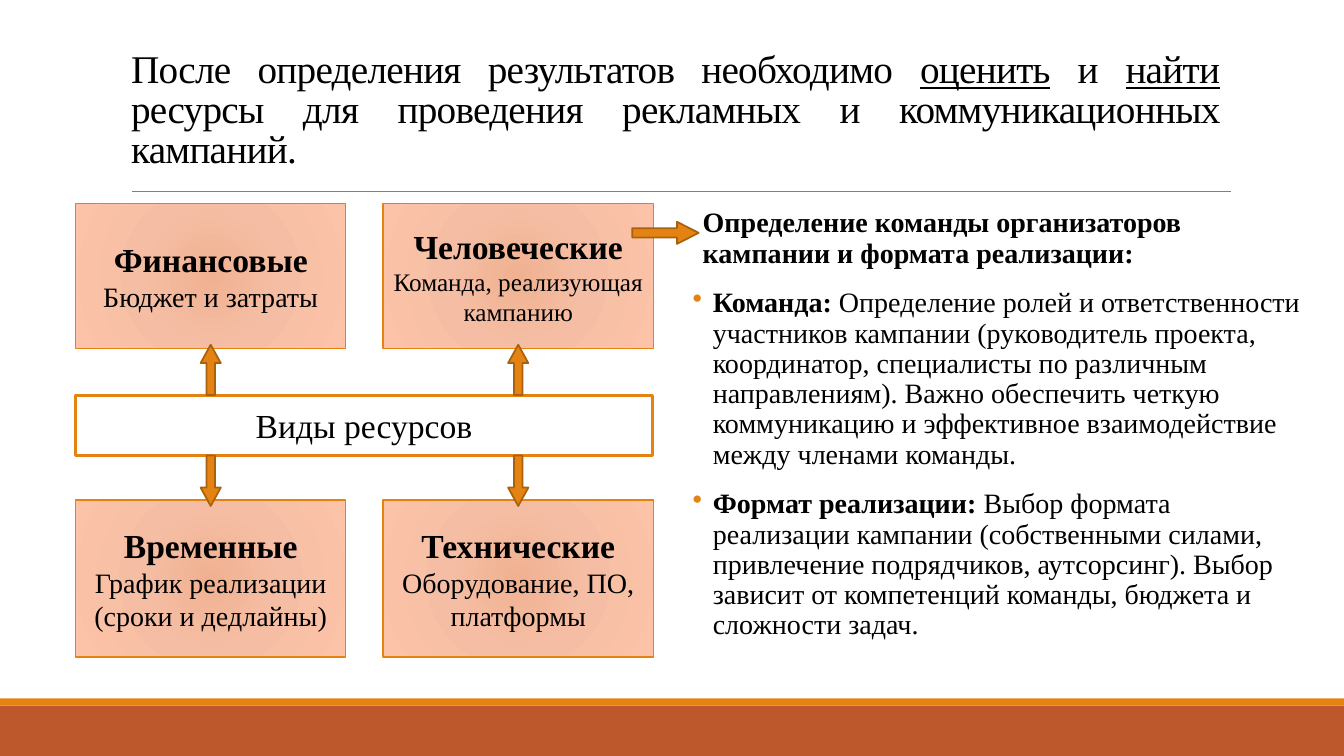
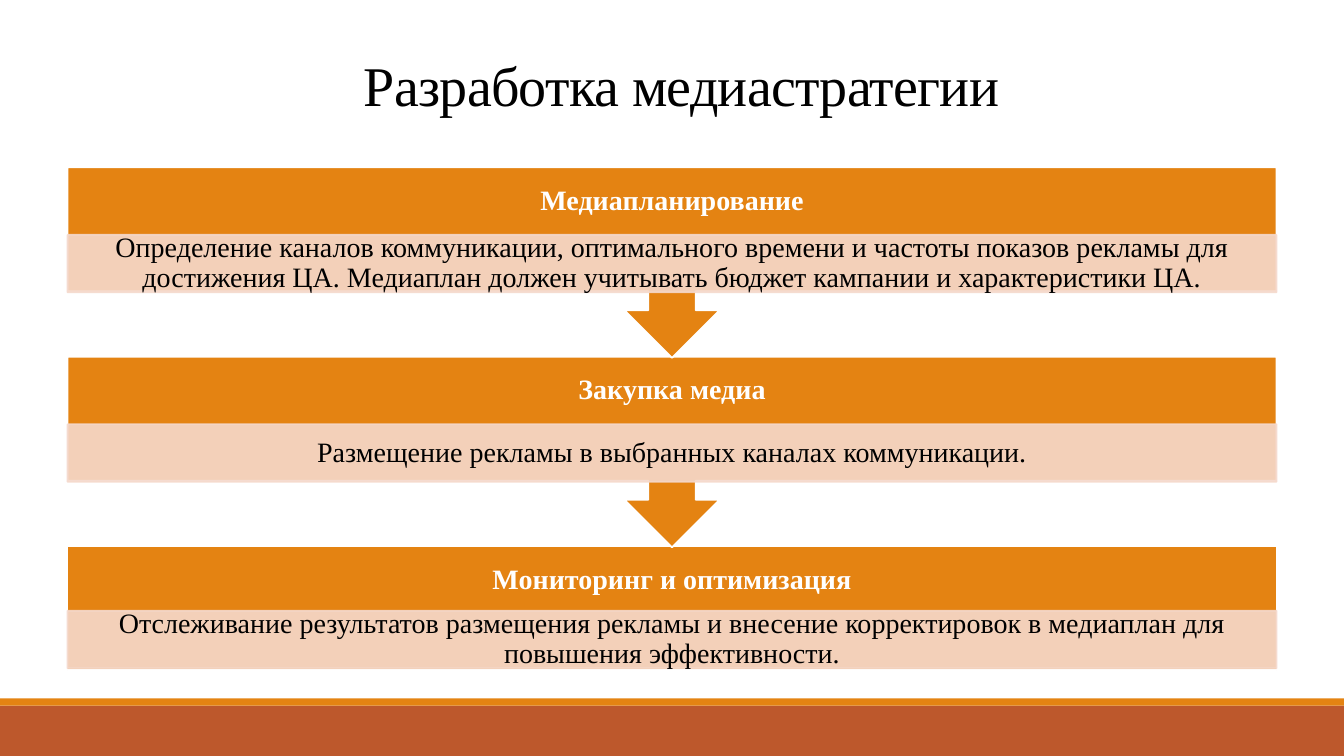
from lxml import etree
from pptx import Presentation
from pptx.dml.color import RGBColor
from pptx.enum import shapes, text
from pptx.oxml import parse_xml
from pptx.oxml.ns import nsdecls, qn
from pptx.util import Inches, Pt

FONT = "Times New Roman"
BLACK = RGBColor(0, 0, 0)
WHITE = RGBColor(255, 255, 255)
GRAY = RGBColor(0x80, 0x80, 0x80)
ORANGE = RGBColor(0xE4, 0x83, 0x12)
BROWN = RGBColor(0xA9, 0x61, 0x0D)
RUST = RGBColor(0xBD, 0x58, 0x2C)
PEACH = RGBColor(0xF5, 0xD9, 0xCC)
GLOW = [(0, "F0B191"), (45, "F5BEA4"), (100, "FDC3A8")]
KIND = shapes.MSO_SHAPE
LEFT, CENTER, FULL = (text.PP_ALIGN.LEFT, text.PP_ALIGN.CENTER,
                      text.PP_ALIGN.JUSTIFY)
TOP, MIDDLE = text.MSO_ANCHOR.TOP, text.MSO_ANCHOR.MIDDLE

BOLD, UNDER = {"bold": True}, {"underline": True}
GOAL = [[
    ("После определения результатов необходимо ", {}),
    ("оценить", UNDER), (" и ", {}), ("найти", UNDER),
    (" ресурсы для проведения рекламных и коммуникационных кампаний.", {}),
]]
HUB = "Виды ресурсов"
KINDS = [
    [("Финансовые", "Бюджет и затраты", 20),
     ("Человеческие", "Команда, реализующая кампанию", 18)],
    [("Временные", "График реализации (сроки и дедлайны)", 20),
     ("Технические", "Оборудование, ПО, платформы", 20)],
]
TEAM = [
    [("Определение команды организаторов кампании и формата реализации:",
      BOLD)],
    [("Команда:", BOLD),
     (" Определение ролей и ответственности участников кампании "
      "(руководитель проекта, координатор, специалисты по различным "
      "направлениям). Важно обеспечить четкую коммуникацию и эффективное "
      "взаимодействие между членами команды.", {})],
    [("Формат реализации:", BOLD),
     (" Выбор формата реализации кампании (собственными силами, "
      "привлечение подрядчиков, аутсорсинг). Выбор зависит от компетенций "
      "команды, бюджета и сложности задач.", {})],
]
PLAN = "Разработка медиастратегии"
STEPS = [
    ("Медиапланирование",
     "Определение каналов коммуникации, оптимального времени и частоты "
     "показов рекламы для достижения ЦА. Медиаплан должен учитывать бюджет "
     "кампании и характеристики ЦА."),
    ("Закупка медиа", "Размещение рекламы в выбранных каналах коммуникации."),
    ("Мониторинг и оптимизация",
     "Отслеживание результатов размещения рекламы и внесение корректировок "
     "в медиаплан для повышения эффективности."),
]


def put(shape, paras, size=20, color=BLACK, align=CENTER, anchor=MIDDLE,
        line=1, before=0, after=0, pad=(0.1, 0.05), track=0):
    frame = shape.text_frame
    frame.word_wrap = True
    frame.auto_size = text.MSO_AUTO_SIZE.NONE
    frame.vertical_anchor = anchor
    frame.margin_left = frame.margin_right = Inches(pad[0])
    frame.margin_top = frame.margin_bottom = Inches(pad[1])
    if isinstance(paras, str):
        paras = [[(paras, {})]]
    for i, runs in enumerate(paras):
        para = frame.paragraphs[0] if i == 0 else frame.add_paragraph()
        para.alignment, para.line_spacing = align, line
        para.space_before, para.space_after = Pt(before), Pt(after)
        for words, style in runs:
            run = para.add_run()
            run.text = words
            font = run.font
            font.name, font.size, font.color.rgb = FONT, Pt(size), color
            for key, val in style.items():
                setattr(font, key, val)
            if track:
                run._r.get_or_add_rPr().set("spc", str(track))
    return frame


def draw(slide, kind, at, fill, edge=None, width=1.25):
    shape = slide.shapes.add_shape(kind, *map(Inches, at))
    shape.shadow.inherit = False
    shape.fill.solid()
    shape.fill.fore_color.rgb = fill
    if edge is None:
        shape.line.fill.background()
    else:
        shape.line.color.rgb, shape.line.width = edge, Pt(width)
    return shape


def glow(shape):
    stops = "".join(
        f'<a:gs pos="{pos * 1000}"><a:srgbClr val="{val}"/></a:gs>'
        for pos, val in GLOW)
    grad = parse_xml(
        f'<a:gradFill {nsdecls("a")} rotWithShape="1"><a:gsLst>{stops}'
        '</a:gsLst><a:path path="circle"><a:fillToRect l="100000" '
        't="100000" r="100000" b="100000"/></a:path></a:gradFill>')
    props = shape.element.spPr
    props.replace(props.find(qn("a:solidFill")), grad)


def fade(shape, share):
    for tint in shape.element.spPr.iter(qn("a:srgbClr")):
        etree.SubElement(tint, qn("a:alpha")).set("val", str(share * 1000))


def bullet(para, indent, mark):
    props = para._p.get_or_add_pPr()
    props.set("marL", str(Inches(indent)))
    props.set("indent", str(-Inches(indent) if mark else 0))
    if mark:
        tint = etree.SubElement(props, qn("a:buClr"))
        etree.SubElement(tint, qn("a:srgbClr")).set("val", str(ORANGE))
        etree.SubElement(props, qn("a:buChar")).set("char", mark)
    else:
        etree.SubElement(props, qn("a:buNone"))


def frame_up(slide, layout):
    rule = slide.shapes.add_connector(
        shapes.MSO_CONNECTOR.STRAIGHT, Inches(1.31), Inches(1.9),
        Inches(12.21), Inches(1.9))
    rule.line.color.rgb, rule.line.width = GRAY, Pt(0.5)
    etree.SubElement(rule.element.spPr, qn("a:effectLst"))
    parts = [draw(slide, KIND.RECTANGLE, (0, 7, 13.33, 0.5), RUST),
             draw(slide, KIND.RECTANGLE, (0, 6.93, 13.33, 0.07), ORANGE),
             rule]
    for part in parts:
        layout.shapes.element.append(part.element)


def head(slide, words, at, size, align):
    title = slide.shapes.title
    title.left, title.top, title.width, title.height = map(Inches, at)
    put(title, words, size=size, align=align, line=0.85, track=-50)


def arrow(slide, kind, at, adj):
    shape = draw(slide, kind, at, ORANGE, BROWN)
    shape.adjustments[0], shape.adjustments[1] = adj


def resources(slide):
    head(slide, GOAL, (1.2, 0.31, 11, 1.59), 28, FULL)
    body = slide.shapes.add_textbox(*map(Inches, (6.87, 2.02, 6.13, 4.71)))
    frame = put(body, TEAM, align=LEFT, anchor=TOP, line=0.9, before=12,
                after=2, pad=(0, 0.05))
    for i, para in enumerate(frame.paragraphs):
        bullet(para, 0.2 if i else 0.1, "•" if i else None)
    hub = draw(slide, KIND.RECTANGLE, (0.75, 3.92, 5.72, 0.6), WHITE,
               ORANGE, 2.25)
    put(hub, HUB, size=24)
    wide = 2.68
    rows = [(2.02, 1.44, KIND.UP_ARROW, 3.42),
            (4.96, 1.56, KIND.DOWN_ARROW, 4.52)]
    spots = []
    for row, (top, high, kind, tip) in zip(KINDS, rows):
        for col, (name, note, size) in enumerate(row):
            left = 0.75 + col * 3.05
            box = draw(slide, KIND.RECTANGLE, (left, top, wide, high),
                       ORANGE, ORANGE, 1)
            glow(box)
            put(box, [[(name, {"bold": True, "size": Pt(24)})],
                      [(note, {})]], size=size)
            spots.append((kind, (left + wide / 2 - 0.1, tip, 0.2, 0.5)))
    for kind, at in spots:
        arrow(slide, kind, at, (0.42, 0.91))
    arrow(slide, KIND.RIGHT_ARROW, (6.27, 2.2, 0.66, 0.22), (0.42, 0.98))


def strategy(slide):
    head(slide, PLAN, (1.26, 0.31, 11, 1.16), 40, CENTER)
    left, wide, last = 0.67, 11.99, len(STEPS) - 1
    for i, (name, note) in reversed(list(enumerate(STEPS))):
        top = 1.66 + i * 1.88
        if i == last:
            draw(slide, KIND.RECTANGLE, (left, top, wide, 1.23), ORANGE, WHITE)
        else:
            block = draw(slide, KIND.UP_ARROW_CALLOUT,
                         (left, top, wide, 1.89), ORANGE, WHITE)
            block.rotation = 180
        label = slide.shapes.add_textbox(
            *map(Inches, (left, top, wide, 0.67)))
        put(label, [[(name, BOLD)]], color=WHITE, line=0.9, pad=(0.16, 0.16))
        drop = 0.64 if i == last else 0.67
        strip = draw(slide, KIND.RECTANGLE, (left, top + drop, wide, 0.57),
                     PEACH, PEACH)
        fade(strip, 90)
        put(strip, note, line=0.9, pad=(0.16, 0.03))


def main():
    deck = Presentation()
    deck.slide_width, deck.slide_height = Inches(13.33), Inches(7.5)
    layout = deck.slide_layouts[5]
    for i, build in enumerate((resources, strategy)):
        slide = deck.slides.add_slide(layout)
        if i == 0:
            frame_up(slide, layout)
        build(slide)
    deck.save("out.pptx")


if __name__ == "__main__":
    main()
